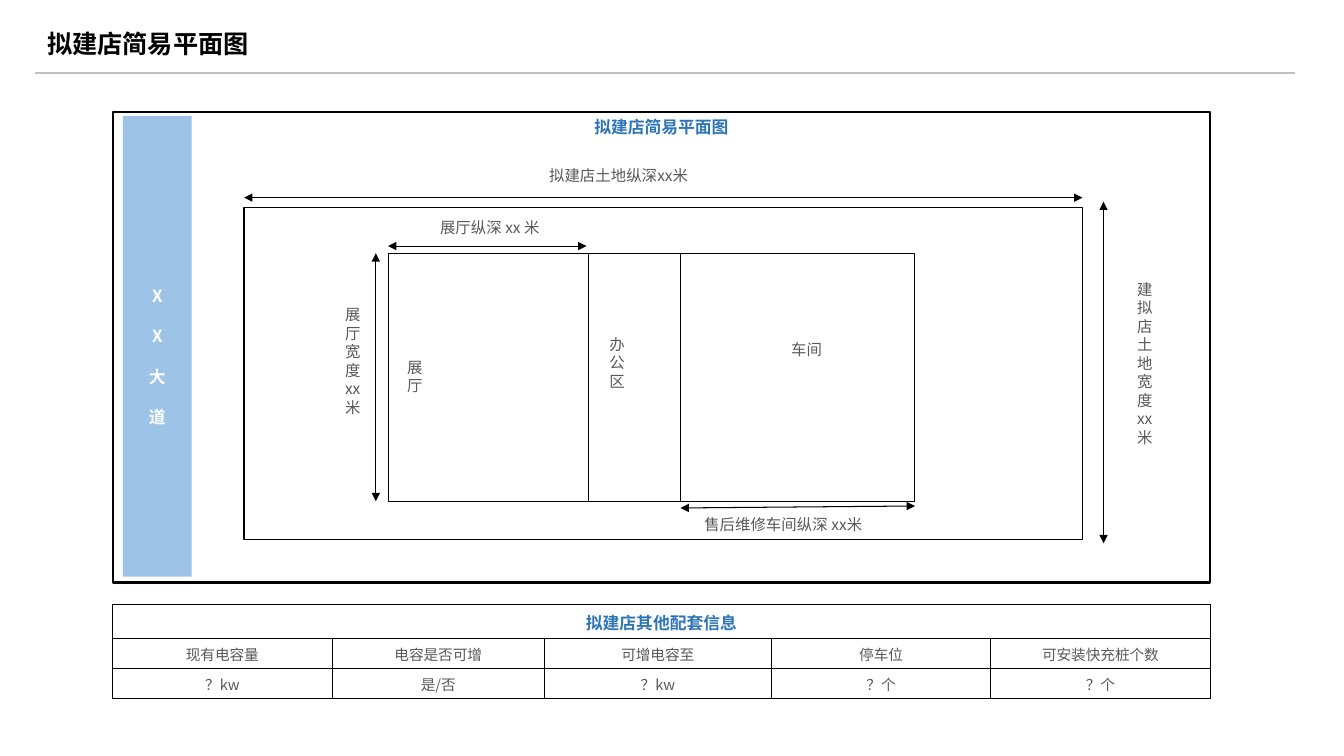
from dataclasses import dataclass

from lxml.etree import SubElement
from pptx import Presentation
from pptx.dml.color import RGBColor
from pptx.enum.shapes import MSO_CONNECTOR, MSO_SHAPE
from pptx.enum.text import MSO_ANCHOR, PP_ALIGN
from pptx.oxml import parse_xml
from pptx.oxml.ns import nsdecls, qn
from pptx.util import Cm, Pt


@dataclass(frozen=True)
class Theme:
    """Colours, font and type sizes of the slide."""
    font: str = "Noto Sans CJK SC"
    ink: str = "000000"
    paper: str = "FFFFFF"
    label: str = "595959"
    accent: str = "2E75B6"
    road: str = "9DC3E6"
    rule: str = "BFBFBF"
    title_size: float = 18
    heading_size: float = 12
    label_size: float = 11
    table_size: float = 10.5


THEME = Theme()
TITLE = {"size": THEME.title_size, "color": THEME.ink, "bold": True, "align": PP_ALIGN.LEFT}
HEADING = {"size": THEME.heading_size, "color": THEME.accent, "bold": True}
ROAD = {"size": THEME.heading_size, "color": THEME.paper, "bold": True, "gap": 14.4}
LABEL = {"size": THEME.label_size, "color": THEME.label}
JUSTIFIED = {**LABEL, "align": PP_ALIGN.JUSTIFY}
CELL = {"size": THEME.table_size, "color": THEME.label}


def write(frame, text, style, **frame_format):
    """Fill a text frame with one styled paragraph per line of text."""
    for attribute, value in {"word_wrap": True, **frame_format}.items():
        setattr(frame, attribute, value)
    for index, line in enumerate(text.split("\n")):
        paragraph = frame.add_paragraph() if index else frame.paragraphs[0]
        paragraph.alignment = style.get("align", PP_ALIGN.CENTER)
        if index and "gap" in style:
            paragraph.space_before = Pt(style["gap"])
        run = paragraph.add_run()
        run.text = line
        font_format = {"name": THEME.font, "size": Pt(style["size"]), "bold": style.get("bold", False)}
        for attribute, value in font_format.items():
            setattr(run.font, attribute, value)
        run.font.color.rgb = RGBColor.from_string(style["color"])
        SubElement(run.font._element, qn("a:ea"), typeface=THEME.font)


def add_area(slide, box, fill=THEME.paper, outline=None):
    """Add a plain rectangle, outlined when a width is given."""
    area = slide.shapes.add_shape(MSO_SHAPE.RECTANGLE, *map(Cm, box))
    area.shadow.inherit = False
    area.fill.solid()
    area.fill.fore_color.rgb = RGBColor.from_string(fill)
    if outline:
        area.line.color.rgb = RGBColor.from_string(THEME.ink)
        area.line.width = Pt(outline)
    else:
        area.line.fill.background()
    return area


def add_label(slide, box, text, style=LABEL, anchor=MSO_ANCHOR.TOP, **frame_format):
    """Add a white borderless rectangle carrying a label."""
    frame = add_area(slide, box).text_frame
    write(frame, text, style, vertical_anchor=anchor, **frame_format)


def add_note(slide, box, text, style):
    """Add a text box without fill."""
    write(slide.shapes.add_textbox(*map(Cm, box)).text_frame, text, style)


def add_line(slide, ends, color=THEME.ink, width=0.75, arrows=False):
    """Add a straight line, with a triangle at both ends for a dimension."""
    line = slide.shapes.add_connector(MSO_CONNECTOR.STRAIGHT, *map(Cm, ends))
    line.line.color.rgb = RGBColor.from_string(color)
    line.line.width = Pt(width)
    if arrows:
        for end in ("a:headEnd", "a:tailEnd"):
            SubElement(line.line._get_or_add_ln(), qn(end), type="triangle")
    SubElement(line._element.spPr, qn("a:effectLst"))


def add_borders(cell):
    """Draw thin lines on the four sides of a table cell."""
    for index, side in enumerate("LRTB"):
        border = parse_xml(
            f'<a:ln{side} {nsdecls("a")} w="{Pt(0.5)}"><a:solidFill>'
            f'<a:srgbClr val="{THEME.ink}"/></a:solidFill></a:ln{side}>')
        cell._tc.get_or_add_tcPr().insert(index, border)


def add_facilities(slide, box, heading, rows, widths, heights):
    """Add the facilities table under a merged heading row."""
    table = slide.shapes.add_table(len(heights), len(widths), *map(Cm, box)).table
    for attribute in ("first_row", "horz_banding"):
        setattr(table, attribute, False)
    for column, width in zip(table.columns, widths):
        column.width = Cm(width)
    for row, height in zip(table.rows, heights):
        row.height = Cm(height)
    for cell in table.iter_cells():
        cell.fill.background()
        cell.vertical_anchor = MSO_ANCHOR.MIDDLE
        add_borders(cell)
    table.cell(0, 0).merge(table.cell(0, len(widths) - 1))
    write(table.cell(0, 0).text_frame, heading, HEADING)
    for row_index, row in enumerate(rows, 1):
        for column_index, text in enumerate(row):
            write(table.cell(row_index, column_index).text_frame, text, CELL)


def add_site(slide):
    """Draw the framed plan: the road, the land and its dimensions."""
    plan = add_area(slide, (2.84, 2.82, 27.66, 11.86), outline=1.5)
    write(plan.text_frame, "拟建店简易平面图", HEADING, vertical_anchor=MSO_ANCHOR.TOP)
    road = add_area(slide, (3.1, 2.92, 1.73, 11.61), fill=THEME.road)
    write(road.text_frame, "X\nX\n大\n道", ROAD,
          vertical_anchor=MSO_ANCHOR.MIDDLE, margin_top=Cm(0.64))
    add_area(slide, (6.15, 5.23, 21.13, 8.36), outline=0.75)
    add_label(slide, (11.02, 4.06, 9.14, 0.76), "拟建店土地纵深xx米")
    add_label(slide, (28.24, 5.84, 1.22, 6.63), "建拟店土地宽度xx\n米", anchor=MSO_ANCHOR.MIDDLE)
    add_line(slide, (6.15, 4.98, 27.28, 4.98), arrows=True)
    add_line(slide, (27.81, 5.08, 27.81, 13.69), arrows=True)


def add_building(slide):
    """Draw the showroom, office and workshop with their dimensions."""
    top, height = 6.38, 6.25
    bottom = top + height
    add_area(slide, (9.8, top, 8.23, height), outline=0.75)
    add_label(slide, (8.33, 7.57, 1.12, 3.84), "展厅宽度xx米")
    add_line(slide, (14.83, top, 14.83, bottom))
    add_label(slide, (10.06, 5.36, 4.57, 0.84), "展厅纵深 xx 米")
    add_area(slide, (17.15, top, 5.89, height), outline=0.75)
    add_note(slide, (17.5, 12.85, 5.33, 1.04), "售后维修车间纵深 xx米", JUSTIFIED)
    add_label(slide, (15.11, 8.31, 1.96, 2.51), "办\n公\n区", JUSTIFIED)
    add_line(slide, (9.47, top, 9.47, bottom), arrows=True)
    add_line(slide, (9.78, 6.2, 14.78, 6.2), arrows=True)
    add_line(slide, (17.15, 12.8, 23.06, 12.75), arrows=True)
    add_label(slide, (10.01, 8.89, 1.42, 1.65), "展\n厅", JUSTIFIED)
    add_label(slide, (19.69, 7.98, 1.75, 2.62), "车间", JUSTIFIED, margin_top=Cm(0.6))


def main():
    """Build the slide and save it."""
    deck = Presentation()
    deck.slide_width, deck.slide_height = Cm(33.87), Cm(19.05)
    slide = deck.slides.add_slide(deck.slide_layouts[6])
    add_line(slide, (0.89, 1.85, 32.64, 1.85), color=THEME.rule, width=1.5)
    add_site(slide)
    add_building(slide)
    add_facilities(
        slide, (2.84, 15.24, 27.66, 2.36), "拟建店其他配套信息",
        [("现有电容量", "电容是否可增", "可增电容至", "停车位", "可安装快充桩个数"),
         ("？kw", "是/否", "？kw", "？个", "？个")],
        widths=(5.53, 5.35, 5.72, 5.53, 5.53), heights=(0.84, 0.76, 0.76))
    add_note(slide, (0.94, 0.58, 17.96, 1.02), "拟建店简易平面图", TITLE)
    deck.save("out.pptx")


if __name__ == "__main__":
    main()
